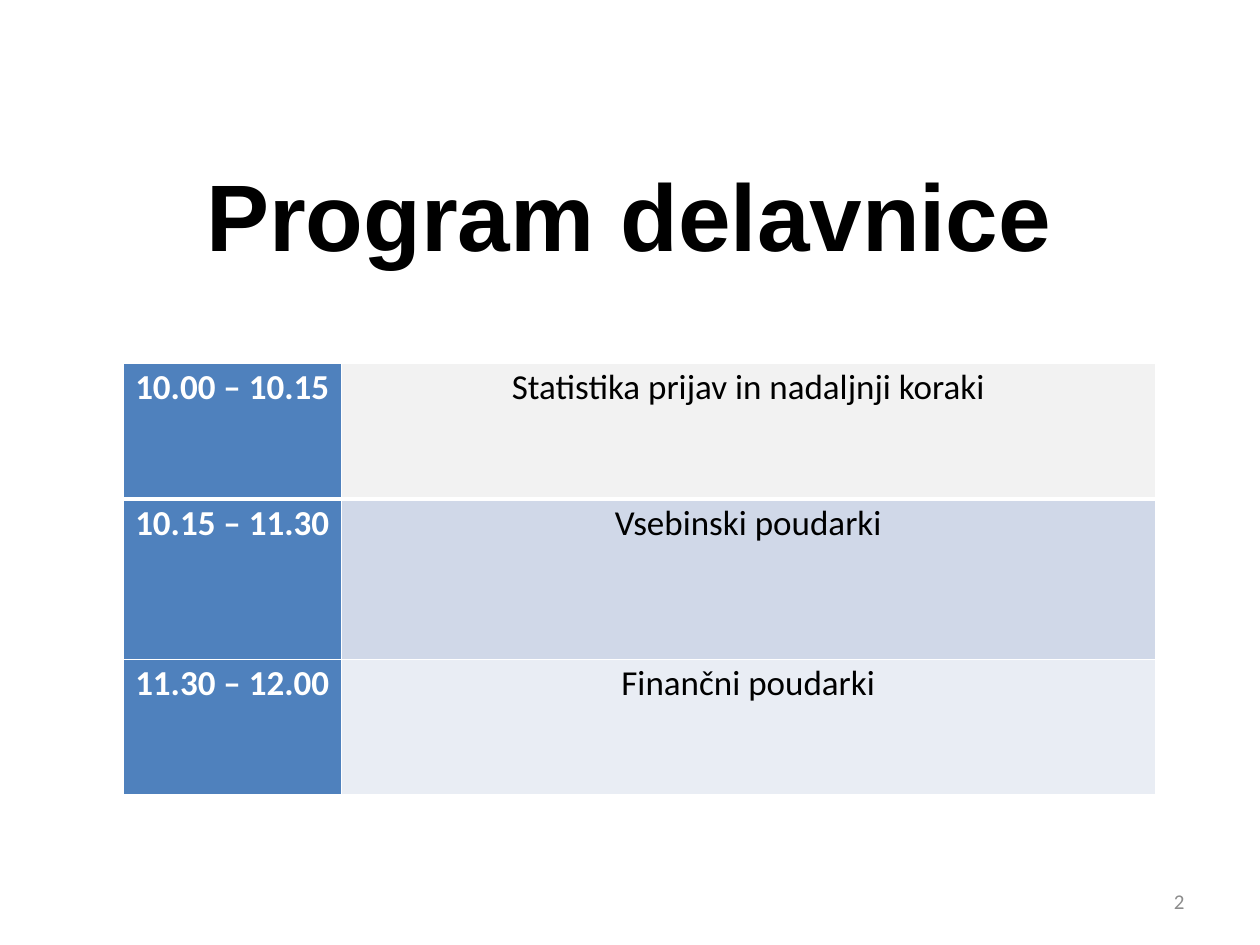
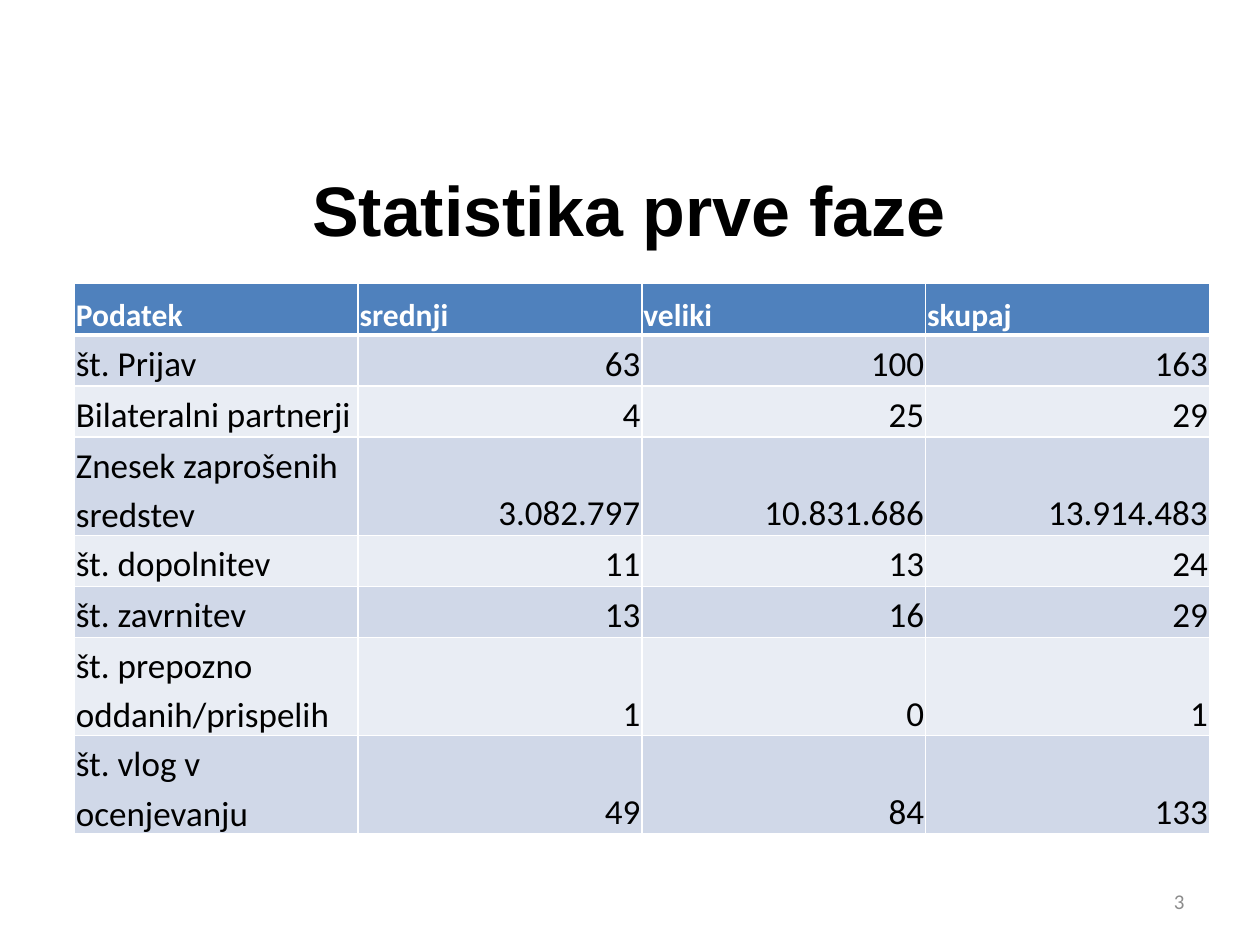
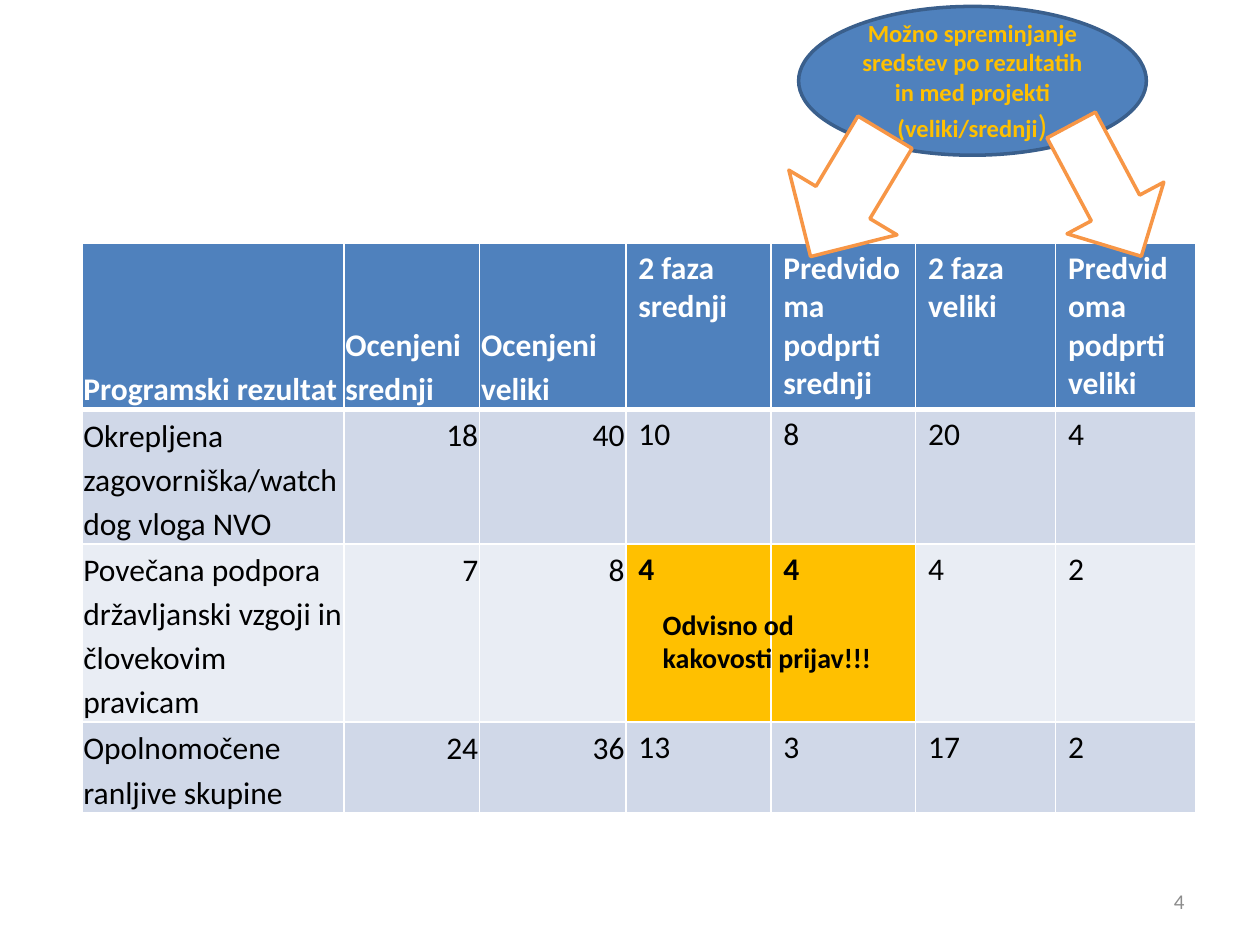
from dataclasses import dataclass

import pptx
import pptx.dml.color
import pptx.enum.shapes
import pptx.enum.text
import pptx.oxml
import pptx.oxml.ns
import pptx.util

Cm = pptx.util.Cm
Pt = pptx.util.Pt
ALIGN = pptx.enum.text.PP_ALIGN
ANCHOR = pptx.enum.text.MSO_ANCHOR
SHAPE = pptx.enum.shapes.MSO_SHAPE


@dataclass(frozen=True)
class Theme:
    heading_font: str = "Arial"
    body_font: str = "Calibri"
    black: str = "000000"
    white: str = "FFFFFF"
    blue: str = "4F81BD"
    blue_line: str = "3A5F8C"
    band_dark: str = "D0D8E8"
    band_light: str = "E9EDF4"
    grey: str = "F2F2F2"
    number: str = "8C8C8C"
    amber: str = "FFC000"
    orange: str = "F79646"
    big_title: int = 54
    title: int = 40
    large: int = 20
    medium: int = 18
    note: int = 16
    callout: int = 14
    small: int = 12


T = Theme()


@dataclass(frozen=True)
class CellLayout:
    align: ALIGN = ALIGN.LEFT
    anchor: ANCHOR = ANCHOR.TOP
    margins: tuple = (0.25, 0.13, 0.25, 0.13)
    spacing: float = 1.0


TIGHT = (0.03, 0.03, 0.03, 0)
PROGRAM = CellLayout(ALIGN.CENTER, margins=(0.18, 0, 0.18, 0), spacing=1.07)
LABEL = CellLayout(ALIGN.LEFT, ANCHOR.BOTTOM, TIGHT, 1.15)
AMOUNT = CellLayout(ALIGN.RIGHT, ANCHOR.BOTTOM, TIGHT, 1.15)
TOP_AMOUNT = CellLayout(ALIGN.RIGHT, ANCHOR.TOP, TIGHT, 1.15)
PLAIN = CellLayout()


def rgb(color):
    return pptx.dml.color.RGBColor.from_string(color)


def set_font(font, size, color, bold=False, name=T.body_font):
    font.name, font.size, font.bold = name, Pt(size), bold
    font.color.rgb = rgb(color)


def add_text(slide, box, text, size, color, bold=False, name=T.body_font,
             align=ALIGN.LEFT, anchor=ANCHOR.MIDDLE):
    tf = slide.shapes.add_textbox(*map(Cm, box)).text_frame
    tf.word_wrap = True
    tf.vertical_anchor = anchor
    p = tf.paragraphs[0]
    p.text = text
    p.alignment = align
    set_font(p.font, size, color, bold, name)


def add_title(slide, top, height, text, size):
    add_text(slide, (1.25, top, 22.86, height), text, size, T.black, True,
             T.heading_font, ALIGN.CENTER)


def add_number(slide, number):
    add_text(slide, (23.09, 17.65, 1.04, 1.02), str(number), T.small, T.number,
             align=ALIGN.RIGHT)


def add_shape(slide, kind, box, fill, line, rotation=0):
    sp = slide.shapes.add_shape(kind, *map(Cm, box))
    sp.shadow.inherit = False
    sp.fill.solid()
    sp.fill.fore_color.rgb = rgb(fill)
    sp.line.color.rgb = rgb(line)
    sp.line.width = Pt(2)
    sp.rotation = rotation
    return sp


def add_borders(cell, top, bottom):
    tc_pr = cell._tc.get_or_add_tcPr()
    for side, width in (("L", 1), ("R", 1), ("T", top), ("B", bottom)):
        tc_pr.append(pptx.oxml.parse_xml(
            f'<a:ln{side} {pptx.oxml.ns.nsdecls("a")} w="{Pt(width)}">'
            f'<a:solidFill><a:srgbClr val="{T.white}"/></a:solidFill></a:ln{side}>'))


def fill_cell(cell, text, layout, fill, size, color, bold):
    cell.fill.solid()
    cell.fill.fore_color.rgb = rgb(fill)
    cell.vertical_anchor = layout.anchor
    (cell.margin_left, cell.margin_top,
     cell.margin_right, cell.margin_bottom) = map(Cm, layout.margins)
    p = cell.text_frame.paragraphs[0]
    p.text = text
    p.alignment = layout.align
    p.line_spacing = layout.spacing
    set_font(p.font, size, color, bold)


def add_table(slide, left, top, widths, heights, rows, style):
    table = slide.shapes.add_table(len(rows), len(widths), Cm(left), Cm(top),
                                   Cm(sum(widths)), Cm(sum(heights))).table
    table.first_row = table.horz_banding = False
    for column, width in zip(table.columns, widths):
        column.width = Cm(width)
    for row, height in zip(table.rows, heights):
        row.height = Cm(height)
    for i, row in enumerate(rows):
        for j, text in enumerate(row):
            cell = table.cell(i, j)
            add_borders(cell, 3 if i == 1 else 1, 3 if i == 0 else 1)
            fill_cell(cell, text, *style(i, j))


def band(i):
    return T.band_dark if i % 2 else T.band_light


def program_style(i, j):
    if j == 0:
        return PROGRAM, T.blue, T.large, T.white, True
    return PROGRAM, band(i) if i else T.grey, T.large, T.black, False


def statistics_style(i, j):
    if i == 0:
        return LABEL, T.blue, T.medium, T.white, True
    return AMOUNT if j else LABEL, band(i), T.large, T.black, False


def results_style(i, j):
    if i == 0:
        return LABEL if j < 3 else PLAIN, T.blue, T.medium, T.white, True
    layout = LABEL if j == 0 else TOP_AMOUNT if j < 3 else PLAIN
    marked = i == 2 and j in (3, 4)
    return layout, T.amber if marked else band(i), T.medium, T.black, marked


def add_callout(slide):
    sp = add_shape(slide, SHAPE.OVAL, (16.1, 0.13, 7.01, 3), T.blue, T.blue_line)
    tf = sp.text_frame
    tf.word_wrap = True
    tf.vertical_anchor = ANCHOR.MIDDLE
    p = tf.paragraphs[0]
    p.alignment = ALIGN.CENTER
    for text, size, bold in (
            ("Možno spreminjanje sredstev po rezultatih in med projekti (veliki/srednji",
             T.callout, True),
            (")", T.medium, False)):
        r = p.add_run()
        r.text = text
        set_font(r.font, size, T.amber, bold)
    add_shape(slide, SHAPE.DOWN_ARROW, (15.82, 2.46, 2.54, 2.92),
              T.white, T.orange, 30.9)
    add_shape(slide, SHAPE.RIGHT_ARROW, (20.8, 2.74, 3, 2.21),
              T.white, T.orange, 61.9)


def program_slide(slide):
    add_title(slide, 2.72, 3.18, "Program delavnice", T.big_title)
    rows = [
        ("10.00 – 10.15", "Statistika prijav in nadaljnji koraki"),
        ("10.15 – 11.30", "Vsebinski poudarki"),
        ("11.30 – 12.00", "Finančni poudarki"),
    ]
    add_table(slide, 2.49, 7.32, (4.39, 16.41), (2.74, 3.23, 2.74), rows,
              program_style)


def statistics_slide(slide):
    add_title(slide, 2.51, 3.38, "Statistika prve faze", T.title)
    rows = [
        ("Podatek", "srednji", "veliki", "skupaj"),
        ("št. Prijav", "63", "100", "163"),
        ("Bilateralni partnerji", "4", "25", "29"),
        ("Znesek zaprošenih sredstev", "3.082.797", "10.831.686", "13.914.483"),
        ("št. dopolnitev", "11", "13", "24"),
        ("št. zavrnitev", "13", "16", "29"),
        ("št. prepozno oddanih/prispelih", "1", "0", "1"),
        ("št. vlog v ocenjevanju", "49", "84", "133"),
    ]
    heights = [1.98 if i in (3, 6, 7) else 1.03 for i in range(len(rows))]
    add_table(slide, 1.5, 5.72, [5.72] * 4, heights, rows, statistics_style)


def results_slide(slide):
    rows = [
        ("Programski rezultat", "Ocenjeni srednji", "Ocenjeni veliki",
         "2 faza srednji", "Predvidoma podprti srednji",
         "2 faza veliki", "Predvidoma podprti veliki"),
        ("Okrepljena zagovorniška/watchdog vloga NVO",
         "18", "40", "10", "8", "20", "4"),
        ("Povečana podpora državljanski vzgoji in človekovim pravicam",
         "7", "8", "4", "4", "4", "2"),
        ("Opolnomočene ranljive skupine", "24", "36", "13", "3", "17", "2"),
    ]
    add_table(slide, 1.65, 4.9, (5.28, 2.74, 2.95, 2.92, 2.92, 2.82, 2.82),
              (3.35, 2.72, 3.58, 1.83), rows, results_style)
    add_text(slide, (13.11, 12.12, 4.8, 1.63), "Odvisno od kakovosti prijav!!!",
             T.note, T.black, True, anchor=ANCHOR.TOP)
    add_callout(slide)


def main():
    prs = pptx.Presentation()
    prs.slide_width, prs.slide_height = Cm(25.4), Cm(19.05)
    builders = (program_slide, statistics_slide, results_slide)
    for number, build in enumerate(builders, start=2):
        slide = prs.slides.add_slide(prs.slide_layouts[6])
        build(slide)
        add_number(slide, number)
    prs.save("out.pptx")


if __name__ == "__main__":
    main()
